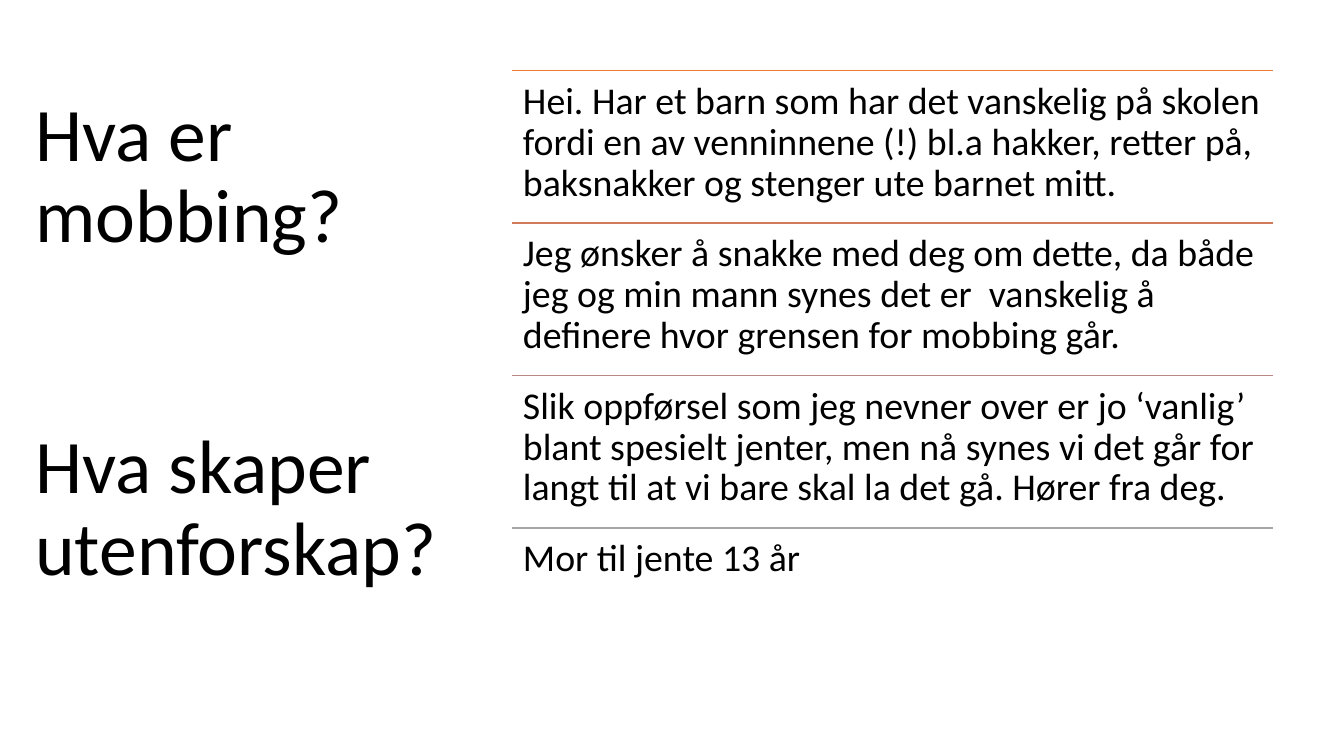
from dataclasses import dataclass
from lxml.etree import SubElement
from pptx import Presentation
from pptx.dml.color import RGBColor
from pptx.enum.shapes import MSO_CONNECTOR
from pptx.enum.text import MSO_ANCHOR, MSO_AUTO_SIZE, PP_ALIGN
from pptx.oxml.ns import qn
from pptx.util import Cm, Pt

TITLE = "Hva er mobbing?"
QUESTION = "Hva skaper utenforskap?"
LETTER = [
    ("ED7D31", "Hei. Har et barn som har det vanskelig på skolen fordi en av venninnene (!) bl.a hakker, retter på, baksnakker og stenger ute barnet mitt."),
    ("D17B5C", "Jeg ønsker å snakke med deg om dette, da både jeg og min mann synes det er  vanskelig å definere hvor grensen for mobbing går."),
    ("B98A82", "Slik oppførsel som jeg nevner over er jo ‘vanlig’ blant spesielt jenter, men nå synes vi det går for langt til at vi bare skal la det gå. Hører fra deg."),
    ("A5A5A5", "Mor til jente 13 år"),
]


@dataclass(frozen=True)
class Theme:
    font: str = "Calibri"
    ink: str = "000000"
    heading: int = 54
    body: int = 27
    rule: int = 1


THEME = Theme()
TOP = Cm(1.78)
HEAD_LEFT, HEAD_W, HEAD_H = Cm(0.64), Cm(10.64), Cm(5.38)
QUESTION_TOP = Cm(10.16)
LETTER_LEFT, LETTER_W, ROW_H = Cm(12.9), Cm(19.18), Cm(3.84)


def apply(target, values):
    for name, value in values.items():
        setattr(target, name, value)


def write(sp, text, size, anchor, side, edge):
    tf = sp.text_frame
    apply(tf, {
        "word_wrap": True, "auto_size": MSO_AUTO_SIZE.NONE,
        "vertical_anchor": anchor, "margin_left": side, "margin_right": side,
        "margin_top": edge, "margin_bottom": edge,
    })
    p = tf.paragraphs[0]
    apply(p, {"alignment": PP_ALIGN.LEFT, "line_spacing": 0.9})
    r = p.add_run()
    r.text = text
    apply(r.font, {"name": THEME.font, "size": Pt(size)})
    r.font.color.rgb = RGBColor.from_string(THEME.ink)


def write_heading(sp, text):
    write(sp, text, THEME.heading, MSO_ANCHOR.MIDDLE, Cm(0.25), Cm(0.13))


def add_rule(s, y, color):
    rule = s.shapes.add_connector(
        MSO_CONNECTOR.STRAIGHT, LETTER_LEFT, y, LETTER_LEFT + LETTER_W, y)
    rule.line.color.rgb = RGBColor.from_string(color)
    rule.line.width = Pt(THEME.rule)
    SubElement(rule._element.spPr, qn("a:effectLst"))


def main():
    prs = Presentation()
    apply(prs, {"slide_width": Cm(33.87), "slide_height": Cm(19.05)})
    s = prs.slides.add_slide(prs.slide_layouts[5])

    title = s.shapes.title
    apply(title, {"left": HEAD_LEFT, "top": TOP, "width": HEAD_W, "height": HEAD_H})
    write_heading(title, TITLE)

    for i, (color, text) in enumerate(LETTER):
        y = TOP + i * ROW_H
        add_rule(s, y, color)
        sp = s.shapes.add_textbox(LETTER_LEFT, y, LETTER_W, ROW_H)
        write(sp, text, THEME.body, MSO_ANCHOR.TOP, Cm(0.28), Cm(0.28))

    write_heading(s.shapes.add_textbox(HEAD_LEFT, QUESTION_TOP, HEAD_W, HEAD_H), QUESTION)
    prs.save("out.pptx")


if __name__ == "__main__":
    main()
